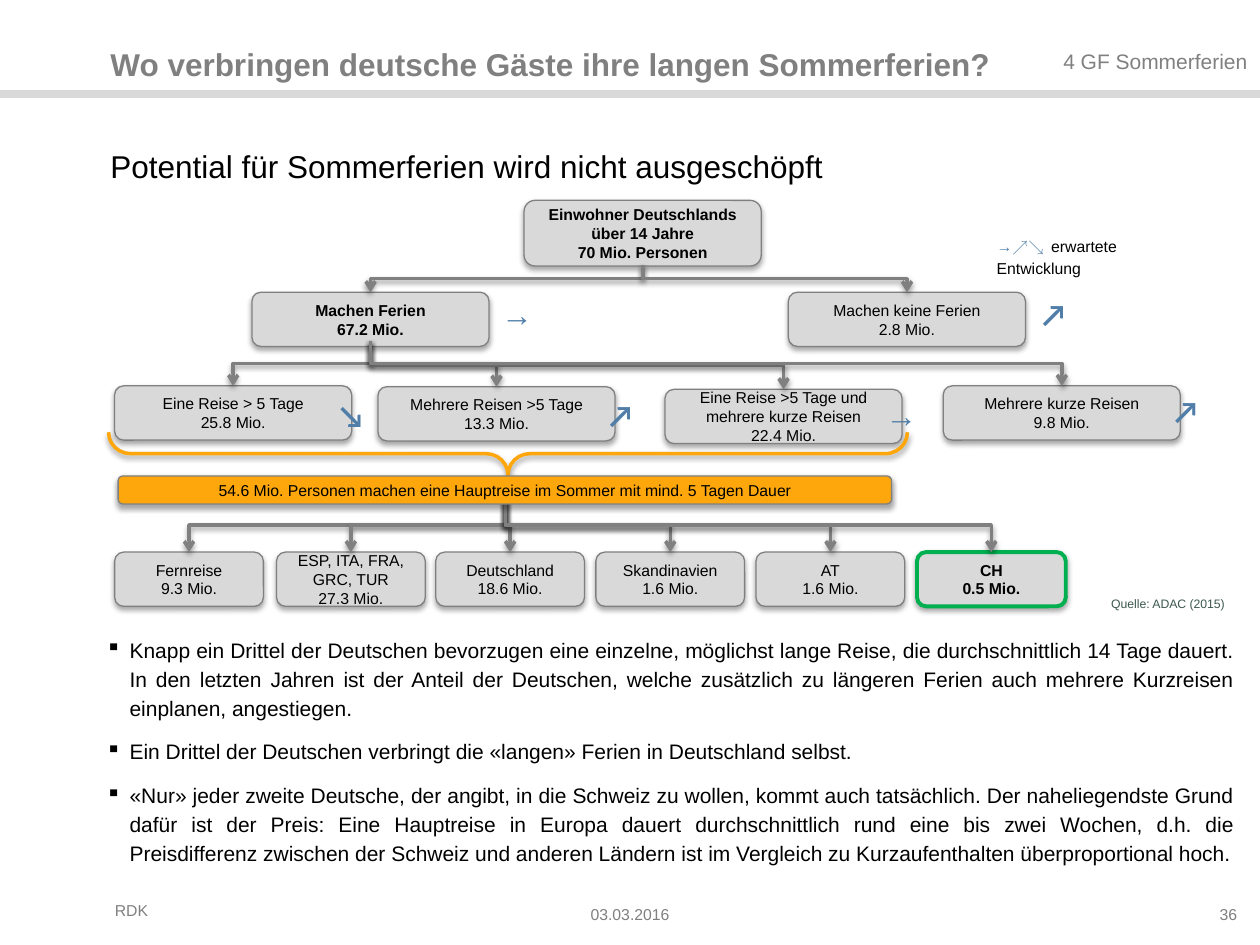
import pptx
import pptx.util
import pptx.dml.color
import pptx.enum.shapes
import pptx.enum.text
import pptx.oxml
import pptx.oxml.ns

Pt = pptx.util.Pt
RGBColor = pptx.dml.color.RGBColor
SHAPE = pptx.enum.shapes.MSO_SHAPE
ELBOW = pptx.enum.shapes.MSO_CONNECTOR.ELBOW
ALIGN = pptx.enum.text.PP_ALIGN
ANCHOR = pptx.enum.text.MSO_ANCHOR
FIT = pptx.enum.text.MSO_AUTO_SIZE

BLACK = RGBColor(0, 0, 0)
GRAY = RGBColor(0x80, 0x80, 0x80)
LIGHT = RGBColor(0xD9, 0xD9, 0xD9)
ORANGE = RGBColor(0xFD, 0xA7, 0x0D)
GREEN = RGBColor(0x00, 0xB0, 0x50)
BLUE = RGBColor(0x50, 0x7E, 0xA8)
SOURCE = RGBColor(0x3C, 0x58, 0x4D)

NOTES = [
    "Knapp ein Drittel der Deutschen bevorzugen eine einzelne, möglichst lange Reise, "
    "die durchschnittlich 14 Tage dauert. In den letzten Jahren ist der Anteil der Deutschen, "
    "welche zusätzlich zu längeren Ferien auch mehrere Kurzreisen einplanen, angestiegen.",
    "Ein Drittel der Deutschen verbringt die «langen» Ferien in Deutschland selbst.",
    "«Nur» jeder zweite Deutsche, der angibt, in die Schweiz zu wollen, kommt auch tatsächlich. "
    "Der naheliegendste Grund dafür ist der Preis: Eine Hauptreise in Europa dauert "
    "durchschnittlich rund eine bis zwei Wochen, d.h. die Preisdifferenz zwischen der Schweiz "
    "und anderen Ländern ist im Vergleich zu Kurzaufenthalten überproportional hoch.",
]


def style(font, size, color, bold=False, name="Arial"):
    font.name = name
    font.size = Pt(size)
    font.bold = bold
    font.color.rgb = color


def add_xml(parent, xml):
    ns = pptx.oxml.ns.nsdecls("a")
    parent.append(pptx.oxml.parse_xml(xml.replace("/>", f" {ns}/>", 1) if xml.endswith("/>")
                                      else xml.replace(">", f" {ns}>", 1)))


def add_shadow(shape, alpha, dist):
    add_xml(shape._element.spPr,
            f'<a:effectLst><a:outerShdw blurRad="{Pt(3.15)}" dist="{Pt(dist)}" dir="5400000" '
            f'rotWithShape="0"><a:srgbClr val="000000"><a:alpha val="{alpha}000"/>'
            '</a:srgbClr></a:outerShdw></a:effectLst>')


def add_text(s, x, y, w, h, text, size, color, bold=False, align=ALIGN.LEFT,
             anchor=ANCHOR.TOP, name="Arial"):
    tf = s.shapes.add_textbox(Pt(x), Pt(y), Pt(w), Pt(h)).text_frame
    tf.word_wrap = True
    tf.vertical_anchor = anchor
    p = tf.paragraphs[0]
    p.text = text
    p.alignment = align
    style(p.font, size, color, bold, name)
    return tf


def add_box(s, x, y, w, h, lines, bold=False, fill=LIGHT, line=GRAY, weight=0.75):
    sp = s.shapes.add_shape(SHAPE.ROUNDED_RECTANGLE, Pt(x), Pt(y), Pt(w), Pt(h))
    sp.fill.solid()
    sp.fill.fore_color.rgb = fill
    sp.line.color.rgb = line
    sp.line.width = Pt(weight)
    add_shadow(sp, 35, 1.8)
    tf = sp.text_frame
    tf.word_wrap = True
    tf.vertical_anchor = ANCHOR.MIDDLE
    for i, text in enumerate(lines):
        p = tf.add_paragraph() if i else tf.paragraphs[0]
        p.text = text
        p.alignment = ALIGN.CENTER
        style(p.font, 9, BLACK, bold)


def add_branch(s, x1, y1, x2, y2):
    drop, reach = y2 - y1, abs(x2 - x1)
    left = (x1 + x2 - drop) / 2
    top = (y1 + y2 - reach) / 2
    ends = (left, left + drop) if x2 < x1 else (left + drop, left)
    c = s.shapes.add_connector(ELBOW, Pt(ends[0]), Pt(top), Pt(ends[1]), Pt(top + reach))
    c._element.spPr.xfrm.set("rot", "5400000" if x2 < x1 else "16200000")
    c.line.color.rgb = GRAY
    c.line.width = Pt(2)
    add_xml(c.line._get_or_add_ln(), '<a:tailEnd type="arrow"/>')
    add_shadow(c, 38, 1.57)


def add_trend(s, x, y, symbol):
    name = "Arial" if symbol == "→" else "Calibri"
    tf = add_text(s, x, y, 30, 29, symbol, 18, BLUE, True, name=name)
    tf.word_wrap = False
    tf.auto_size = FIT.SHAPE_TO_FIT_TEXT


def add_header(s, x, y, w):
    bar = s.shapes.add_shape(SHAPE.RECTANGLE, Pt(x), Pt(y + 51.8), Pt(w), Pt(3.6))
    bar.shadow.inherit = False
    bar.fill.solid()
    bar.fill.fore_color.rgb = LIGHT
    bar.line.color.rgb = LIGHT
    bar.line.width = Pt(0.75)
    title = add_text(s, x + 56, y + 20, 577.5, 29,
                     "Wo verbringen deutsche Gäste ihre langen Sommerferien?", 18, GRAY, True)
    chapter = add_text(s, x + w - 212.5, y + 22.5, 212.5, 23, "4 GF Sommerferien", 12, GRAY,
                       align=ALIGN.RIGHT)
    for tf in (title, chapter):
        tf.paragraphs[0].line_spacing = 1.1
    add_text(s, x + 56, y + 78, 651, 34, "Potential für Sommerferien wird nicht ausgeschöpft",
             18, BLACK, anchor=ANCHOR.MIDDLE)


def add_legend(s, x, y, w, h):
    p = add_text(s, x, y, w, h, "", 9, BLACK).paragraphs[0]
    for text, size, color, bold, name in (
            ("→↗↘", 9, BLUE, False, "Arial"),
            (" ", 18, BLUE, True, "Calibri"),
            ("erwartete Entwicklung", 9, BLACK, False, "Arial")):
        r = p.add_run()
        r.text = text
        style(r.font, size, color, bold, name)


def add_tree(s, x, y):
    wide, narrow, height = 135.5, 85, 31
    holidays = [(78.5, 52.5, ["Machen Ferien", "67.2 Mio."], True),
                (385, 52.5, ["Machen keine Ferien", "2.8 Mio."], False)]
    trips = [(0, 106, ["Eine Reise > 5 Tage", "25.8 Mio."], False),
             (150.5, 106.5, ["Mehrere Reisen >5 Tage", "13.3 Mio."], False),
             (314.5, 108, ["Eine Reise >5 Tage und mehrere kurze Reisen", "22.4 Mio."], False),
             (473.5, 106, ["Mehrere kurze Reisen", "9.8 Mio."], False)]
    targets = [(0, 201, ["Fernreise", "9.3 Mio."], False),
               (92.5, 201, ["ESP, ITA, FRA, GRC, TUR", "27.3 Mio."], False),
               (183.5, 201, ["Deutschland", "18.6 Mio."], False),
               (275, 201, ["Skandinavien", "1.6 Mio."], False),
               (366.5, 201, ["AT", "1.6 Mio."], False),
               (458.5, 201, ["CH", "0.5 Mio."], True)]
    add_box(s, x + 234, y, wide, 37.5,
            ["Einwohner Deutschlands über 14 Jahre", "70 Mio. Personen"], True)
    levels = [(holidays, wide, 301.75, 37), (trips, wide, 146.25, 80.5),
              (targets, narrow, 223.25, 170)]
    for nodes, width, start_x, start_y in levels:
        for dx, dy, lines, bold in nodes:
            accent = {"line": GREEN, "weight": 2.25} if lines[0] == "CH" else {}
            add_box(s, x + dx, y + dy, width, height, lines, bold, **accent)
    for nodes, width, start_x, start_y in levels:
        for dx, dy, lines, bold in nodes:
            add_branch(s, x + start_x, y + start_y, x + dx + width / 2, y + dy)

    brace = s.shapes.add_shape(SHAPE.RIGHT_BRACE, Pt(x + 212.5), Pt(y - 83.5), Pt(24.5), Pt(456.5))
    brace.rotation = 90
    brace.adjustments[0] = 0.51
    brace.fill.background()
    brace.line.color.rgb = ORANGE
    brace.line.width = Pt(2)
    add_shadow(brace, 38, 1.57)
    add_box(s, x + 2, y + 157.5, 442, 16,
            ["54.6 Mio. Personen machen eine Hauptreise im Sommer mit mind. 5 Tagen Dauer"],
            fill=ORANGE)

    for dx, dy, symbol in ((214, 50.5, "→"), (522, 50.5, "↗"), (120.5, 108.5, "↘"),
                           (274.5, 108, "↗"), (433.5, 108.5, "→"), (597.5, 106, "↗")):
        add_trend(s, x + dx, y + dy, symbol)
    add_legend(s, x + 497, y + 8, 128, 29)
    add_text(s, x + 445, y + 222.5, 196.5, 16, "Quelle: ADAC (2015)", 7, SOURCE,
             align=ALIGN.RIGHT)


def add_notes(s, x, y, w, h):
    tf = s.shapes.add_textbox(Pt(x), Pt(y), Pt(w), Pt(h)).text_frame
    tf.word_wrap = True
    for i, text in enumerate(NOTES):
        p = tf.add_paragraph() if i else tf.paragraphs[0]
        p.text = text
        pPr = p._p.get_or_add_pPr()
        pPr.set("marL", str(Pt(13.5)))
        pPr.set("indent", str(-Pt(13.5)))
        add_xml(pPr, '<a:buChar char="▪"/>')
        p.alignment = ALIGN.JUSTIFY
        p.line_spacing = 1.15
        p.space_before = Pt(2.4 if i else 0)
        p.space_after = Pt(6)
        style(p.font, 12, BLACK)


def add_footer(s, x, y):
    for dx, dy, w, h, text, align in (
            (0, 0.5, 192, 18, "RDK", ALIGN.LEFT),
            (217.5, 0.5, 168, 22.5, "03.03.2016", ALIGN.CENTER),
            (487.5, 0, 168, 23.5, "36", ALIGN.RIGHT)):
        add_text(s, x + dx, y + dy, w, h, text, 9, GRAY, align=align, anchor=ANCHOR.MIDDLE)


def main():
    prs = pptx.Presentation()
    prs.slide_width, prs.slide_height = Pt(720), Pt(540)
    s = prs.slides.add_slide(prs.slide_layouts[6])
    add_header(s, 0, 0, 720)
    add_tree(s, 65.5, 114.5)
    add_notes(s, 53.5, 358.5, 659.5, 181.5)
    add_footer(s, 58.5, 510.5)
    prs.save("out.pptx")


if __name__ == "__main__":
    main()
